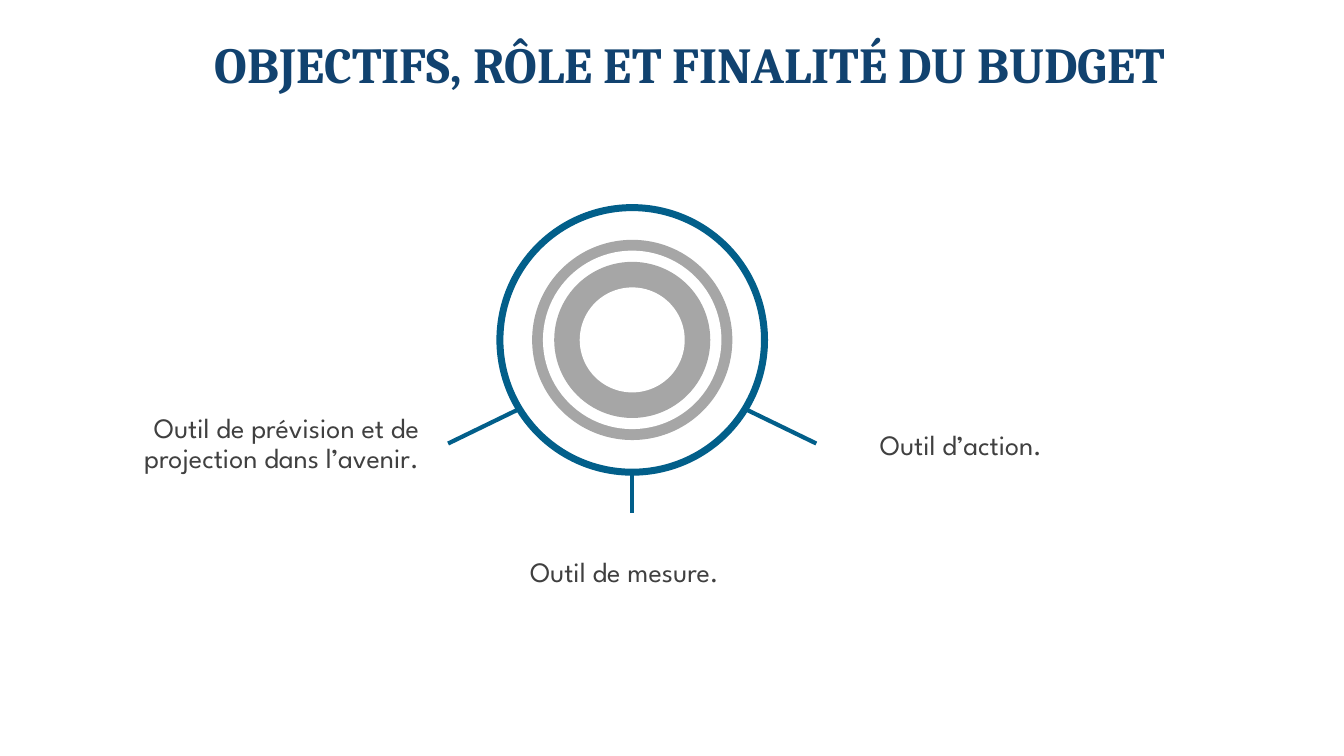
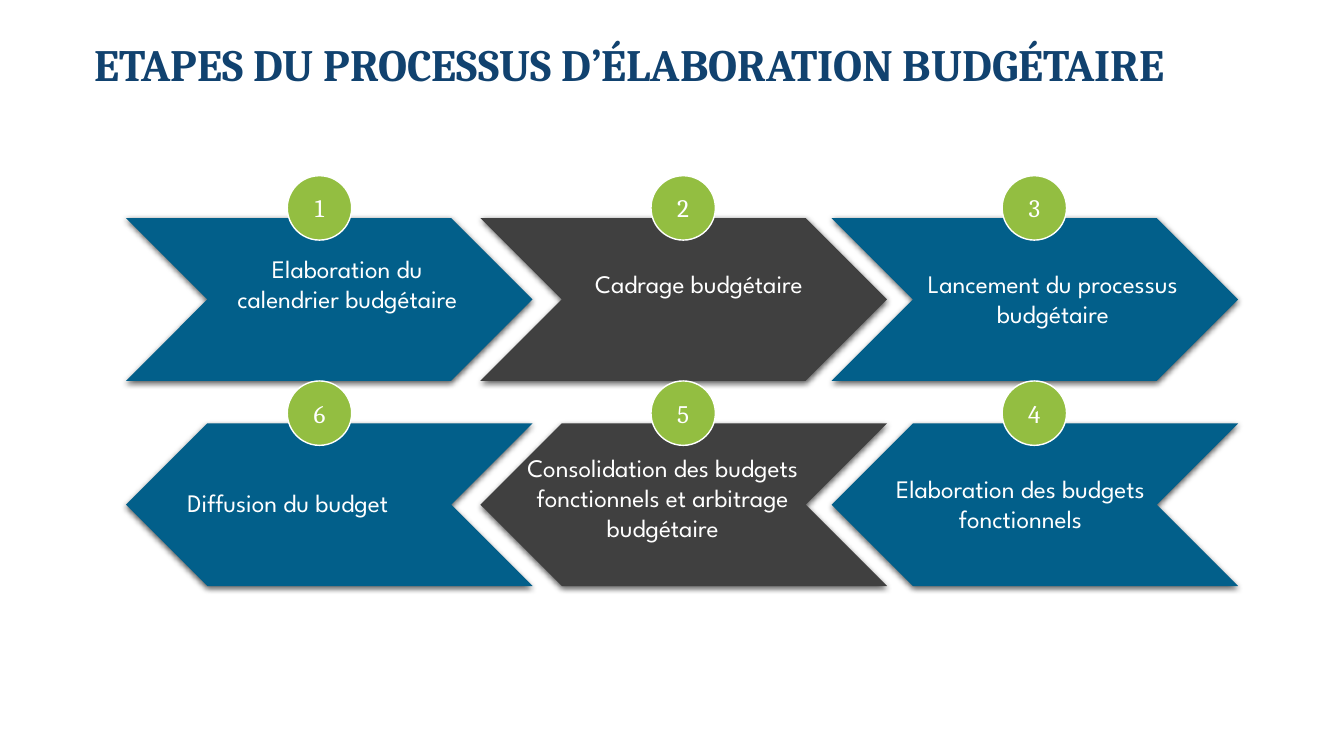
from lxml import etree
from pptx import Presentation
from pptx.dml.color import RGBColor
from pptx.enum import shapes, text
from pptx.oxml import ns
from pptx.util import Pt

COLORS = {"title": "11426F", "blue": "025F8A", "dark": "404040",
          "gray": "A6A6A6", "green": "93BE41", "white": "FFFFFF", "shadow": "000000"}
SERIF, SANS = "Cambria", "League Spartan"
LEFT, CENTER, RIGHT = text.PP_ALIGN.LEFT, text.PP_ALIGN.CENTER, text.PP_ALIGN.RIGHT
TOP, MIDDLE = text.MSO_ANCHOR.TOP, text.MSO_ANCHOR.MIDDLE
SHAPE = shapes.MSO_SHAPE


def rgb(name):
    return RGBColor.from_string(COLORS[name])


def write(sp, content, size, font, color, align, anchor=TOP, bold=False, spacing=None):
    tf = sp.text_frame
    tf.word_wrap = True
    tf.vertical_anchor = anchor
    p = tf.paragraphs[0]
    p.text = content
    p.alignment = align
    p.line_spacing = spacing
    p.font.size = Pt(size)
    p.font.name = font
    p.font.bold = bold
    p.font.color.rgb = rgb(color)


def add_text(s, box, content, *style, **options):
    write(s.shapes.add_textbox(*map(Pt, box)), content, *style, **options)


def add_title(s, content, size):
    add_text(s, (24, 28, 815.5, 40), content, size, SERIF, "title", RIGHT,
             anchor=MIDDLE, bold=True, spacing=0.9)


def add_filled(s, kind, box, color):
    sp = s.shapes.add_shape(kind, *map(Pt, box))
    sp.shadow.inherit = False
    sp.fill.solid()
    sp.fill.fore_color.rgb = rgb(color)
    sp.line.fill.background()
    return sp


def add_spoke(s, start, end):
    line = s.shapes.add_connector(shapes.MSO_CONNECTOR.STRAIGHT, *map(Pt, start + end))
    line.line.color.rgb = rgb("blue")
    line.line.width = Pt(3)
    etree.SubElement(line._element.spPr, ns.qn("a:effectLst"))


def add_drop_shadow(sp):
    effects = sp._element.spPr.find(ns.qn("a:effectLst"))
    shadow = etree.SubElement(effects, ns.qn("a:outerShdw"), blurRad=str(Pt(4.5)),
                              dist=str(Pt(1.5)), dir="5400000", algn="ctr", rotWithShape="0")
    color = etree.SubElement(shadow, ns.qn("a:srgbClr"), val=COLORS["shadow"])
    etree.SubElement(color, ns.qn("a:alpha"), val="63000")


def add_target(s, cx, cy):
    """Concentric rings around (cx, cy), with three spokes pointing outwards."""
    def centered(d):
        return cx - d / 2, cy - d / 2, d, d

    for side in (-1, 1):
        add_spoke(s, (cx + side * 81, cy + 49.5), (cx + side * 131.5, cy + 74))
    add_spoke(s, (cx, cy + 95), (cx, cy + 123.5))
    outer = 194
    ring = add_filled(s, SHAPE.DONUT, centered(outer), "blue")
    ring.adjustments[0] = 5 / outer
    for diameter, color in ((143, "gray"), (127.5, "white"), (111.5, "gray"), (75, "white")):
        add_filled(s, SHAPE.OVAL, centered(diameter), color)


def add_step(s, x, y, color, number, label, label_box, badge_dx, backwards):
    """Chevron at (x, y); label_box (dx, dy, width) and badge_dx are relative to it."""
    chevron = add_filled(s, SHAPE.CHEVRON, (x, y, 290.4, 116.2), color)
    chevron.rotation = 180 if backwards else 0
    add_drop_shadow(chevron)
    dx, dy, width = label_box
    add_text(s, (x + dx, y + dy, width, 51), label, 18, SANS, "white", CENTER)
    badge = add_filled(s, SHAPE.OVAL, (x + badge_dx, y - 30.3, 46, 46), "green")
    badge.line.color.rgb = rgb("white")
    badge.line.width = Pt(1)
    write(badge, str(number), 18, SERIF, "white", CENTER, anchor=MIDDLE)


def objectives_slide(s):
    add_title(s, "OBJECTIFS, RÔLE ET FINALITÉ DU BUDGET", 36)
    add_target(s, 451.6, 242.8)
    for box, content, align in (
            ((48, 292.3, 258.5, 64), "Outil de prévision et de projection dans l’avenir.", RIGHT),
            ((371.5, 395.3, 188.6, 37), "Outil de mesure.", LEFT),
            ((621.4, 304.6, 164, 31), "Outil d’action.", LEFT)):
        add_text(s, box, content, 20, SANS, "dark", align, spacing=0.9)


def process_slide(s):
    add_title(s, "ETAPES DU PROCESSUS D’ÉLABORATION BUDGÉTAIRE", 32)
    columns = ((90, "blue", 115.2), (343.2, "dark", 121.8), (594, "blue", 121.8))
    rows = (
        (155.8, False, (
            (1, "Elaboration du calendrier budgétaire", (63.4, 21.4, 189.4)),
            (2, "Cadrage budgétaire", (61.4, 32.2, 189.4)),
            (3, "Lancement du processus budgétaire", (53.3, 32.2, 209.5)))),
        (302.4, True, (
            (6, "Diffusion du budget", (20.9, 42.3, 189.4)),
            (5, "Consolidation des budgets fonctionnels et arbitrage budgétaire",
             (25.4, 17, 209.5)),
            (4, "Elaboration des budgets fonctionnels", (30.2, 32.2, 209.5)))))
    for y, backwards, steps in rows:
        for (x, color, badge_dx), (number, label, label_box) in zip(columns, steps):
            add_step(s, x, y, color, number, label, label_box, badge_dx, backwards)


def main():
    prs = Presentation()
    prs.slide_width, prs.slide_height = Pt(960), Pt(540)
    for build in (objectives_slide, process_slide):
        build(prs.slides.add_slide(prs.slide_layouts[6]))
    prs.save("out.pptx")


if __name__ == "__main__":
    main()
